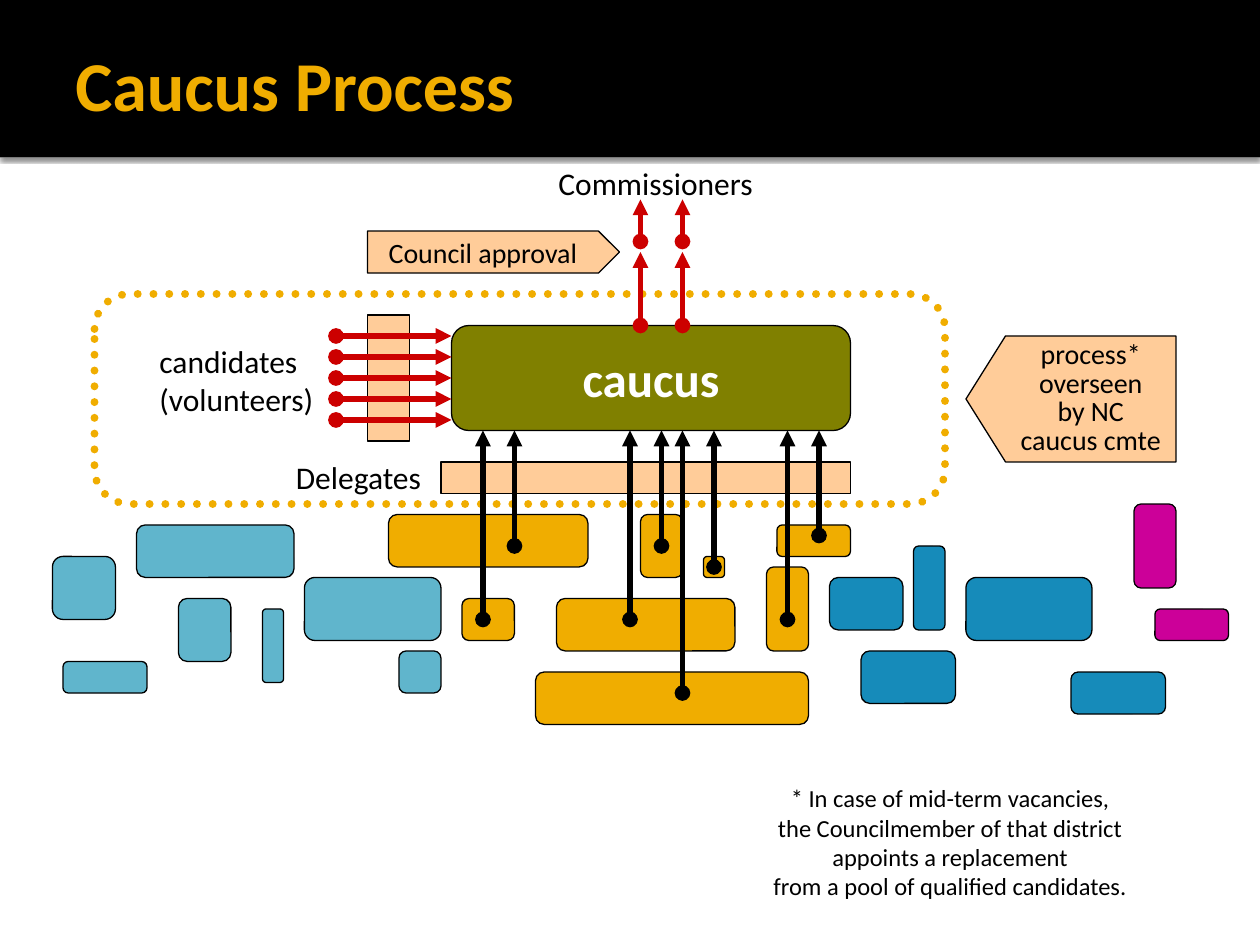
import pptx
import pptx.dml.color
import pptx.enum.dml
import pptx.enum.shapes
import pptx.enum.text
import pptx.oxml
import pptx.oxml.ns
import pptx.util
from pptx.util import Cm

SHAPES = pptx.enum.shapes.MSO_SHAPE
ALIGN = pptx.enum.text.PP_ALIGN
ANCHOR = pptx.enum.text.MSO_ANCHOR

THEME = {
    "font": "Calibri",
    "black": "000000", "white": "FFFFFF", "gold": "F0AD00", "peach": "FFCC99",
    "olive": "808000", "red": "CC0000", "light blue": "60B5CC",
    "blue": "168BBA", "magenta": "CC0099",
    "title": 40, "caucus": 28, "label": 18, "callout": 16, "footnote": 14,
    "outline": 0.75, "arrow": 3, "dots": 4.5,
}

# Places are in grid units of 1/12 inch: left, top, width, height
SLIDE_SIZE = (120, 90)
TITLE = ("Caucus Process", (6, 2, 108, 12))
CAUCUS_FRAME = (9, 28, 81, 20)
SCREENS = [(42, 44, 39, 3), (35, 30, 4, 12)]
CAUCUS = ("caucus", (43, 31, 38, 10))
ORGANISATIONS = {
    "light blue": [(5, 53, 6, 6), (13, 50, 15, 5), (17, 57, 5, 6), (25, 58, 2, 7),
                   (29, 55, 13, 6), (38, 62, 4, 4), (6, 63, 8, 3)],
    "gold": [(37, 49, 19, 5), (44, 57, 5, 4), (53, 57, 17, 5), (61, 49, 4, 6),
             (67, 53, 2, 2), (51, 64, 26, 5), (73, 54, 4, 8), (74, 50, 7, 3)],
    "blue": [(79, 55, 7, 5), (82, 62, 9, 5), (87, 52, 3, 8), (92, 55, 12, 6),
             (102, 64, 9, 4)],
    "magenta": [(108, 48, 4, 8), (110, 58, 7, 3)],
}
DELEGATE_STARTS = [(46, 59), (49, 52), (60, 59), (63, 52), (68, 54), (75, 59),
                   (78, 51), (65, 66)]
CANDIDATE_START, CANDIDATE_ROWS = 32, range(32, 41, 2)
COMMISSIONER_COLUMNS = (61, 65)
COMMISSIONER_STEPS = [(31, 24), (23, 19)]
CALLOUTS = [
    ("process*\noverseen\nby NC\ncaucus cmte", SHAPES.LEFT_ARROW, (92, 32, 20, 12), 0.314, 0, 0.85),
    ("Council approval", SHAPES.RIGHT_ARROW, (35, 22, 24, 4), 0.5, None, None),
]
LABELS = [
    ("candidates\n(volunteers)", (14, 32, 17.4, 8.5)),
    ("Delegates", (27, 43, 14.5, 4.8)),
    ("Commissioners", (52, 15, 21, 4.8)),
]
FOOTNOTE = ("* In case of mid-term vacancies,\nthe Councilmember of that district\n"
            "appoints a replacement\nfrom a pool of qualified candidates.",
            (64, 74, 53, 12.5))


def grid(units):
    return Cm(units * 2.54 / 12)


def color(name):
    return pptx.dml.color.RGBColor.from_string(THEME[name])


def add_xml(parent, xml):
    namespace = pptx.oxml.ns.nsdecls("a")
    element = pptx.oxml.parse_xml(xml.replace(">", f" {namespace}>", 1)
                                  if "/>" not in xml.split(">")[0] + ">"
                                  else xml.replace("/>", f" {namespace}/>", 1))
    parent.append(element)


def add_box(slide, place, fill=None, line="black", kind=SHAPES.RECTANGLE):
    shape = slide.shapes.add_shape(kind, *map(grid, place))
    shape.shadow.inherit = False
    if fill:
        shape.fill.solid()
        shape.fill.fore_color.rgb = color(fill)
    else:
        shape.fill.background()
    if line:
        shape.line.color.rgb = color(line)
        shape.line.width = pptx.util.Pt(THEME["outline"])
    else:
        shape.line.fill.background()
    return shape


def write(shape, text, size, ink="black", bold=False, align=ALIGN.LEFT,
          anchor=ANCHOR.TOP, wrap=False, spacing=None):
    frame = shape.text_frame
    frame.text = text
    frame.word_wrap = wrap
    frame.vertical_anchor = anchor
    for paragraph in frame.paragraphs:
        paragraph.alignment = align
        paragraph.line_spacing = spacing
        for run in paragraph.runs:
            run.font.name = THEME["font"]
            run.font.size = pptx.util.Pt(THEME[size])
            run.font.bold = bold
            run.font.color.rgb = color(ink)


def add_text(slide, text, place, size, **style):
    box = slide.shapes.add_textbox(*map(grid, place))
    write(box, text, size, **style)
    return box


def add_arrow(slide, start, end, ink):
    arrow = slide.shapes.add_connector(
        pptx.enum.shapes.MSO_CONNECTOR.STRAIGHT, *map(grid, start + end))
    arrow.line.color.rgb = color(ink)
    arrow.line.width = pptx.util.Pt(THEME["arrow"])
    properties = arrow._element.spPr
    outline = properties.find(pptx.oxml.ns.qn("a:ln"))
    add_xml(outline, '<a:headEnd type="oval"/>')
    add_xml(outline, '<a:tailEnd type="triangle"/>')
    add_xml(properties, "<a:effectLst/>")
    return arrow


def main():
    presentation = pptx.Presentation()
    presentation.slide_width, presentation.slide_height = map(grid, SLIDE_SIZE)
    slide = presentation.slides.add_slide(presentation.slide_layouts[6])

    # Header: white edge that casts the shadow, black band, title
    edge = add_box(slide, (0, 14.4, 120, 0.6), "white", None)
    effects = edge._element.spPr.find(pptx.oxml.ns.qn("a:effectLst"))
    add_xml(effects, '<a:outerShdw blurRad="31750" dist="10160" dir="5400000">'
                     '<a:srgbClr val="000000"><a:alpha val="60000"/></a:srgbClr></a:outerShdw>')
    add_box(slide, (0, 0, 120, 15), "black", None)
    add_text(slide, *TITLE, "title", ink="gold", bold=True, anchor=ANCHOR.MIDDLE, wrap=True)

    # Dotted frame and screening bars
    frame = add_box(slide, CAUCUS_FRAME, None, "gold", SHAPES.ROUNDED_RECTANGLE)
    frame.line.width = pptx.util.Pt(THEME["dots"])
    frame.line.dash_style = pptx.enum.dml.MSO_LINE.ROUND_DOT
    frame._element.spPr.find(pptx.oxml.ns.qn("a:ln")).set("cap", "rnd")
    for place in SCREENS:
        add_box(slide, place, "peach")

    # Organisations and their delegates
    for fill, places in ORGANISATIONS.items():
        for place in places:
            add_box(slide, place, fill, kind=SHAPES.ROUNDED_RECTANGLE)
    left, top, width, height = CAUCUS[1]
    for x, y in DELEGATE_STARTS:
        add_arrow(slide, (x, y), (x, top + height), "black")

    # Caucus and candidates
    caucus = add_box(slide, CAUCUS[1], "olive", kind=SHAPES.ROUNDED_RECTANGLE)
    write(caucus, CAUCUS[0], "caucus", "white", True, ALIGN.CENTER, ANCHOR.MIDDLE)
    for y in CANDIDATE_ROWS:
        arrow = add_arrow(slide, (CANDIDATE_START, y), (left, y), "red")
        if y == top + height / 2:
            arrow.end_connect(caucus, 1)

    # Callouts and labels
    for text, kind, place, head, inset, spacing in CALLOUTS:
        callout = add_box(slide, place, "peach", kind=kind)
        callout.adjustments[0], callout.adjustments[1] = 1, head
        write(callout, text, "callout", align=ALIGN.CENTER, anchor=ANCHOR.MIDDLE, spacing=spacing)
        if inset is not None:
            text_frame = callout.text_frame
            text_frame.margin_left = text_frame.margin_right = Cm(inset)
            text_frame.margin_top = text_frame.margin_bottom = Cm(inset)
    for text, place in LABELS:
        add_text(slide, text, place, "label")

    # Approval steps up to the commissioners
    for start, end in COMMISSIONER_STEPS:
        for x in COMMISSIONER_COLUMNS:
            add_arrow(slide, (x, start), (x, end), "red")

    add_text(slide, *FOOTNOTE, "footnote", align=ALIGN.CENTER, wrap=True)
    presentation.save("out.pptx")


if __name__ == "__main__":
    main()
